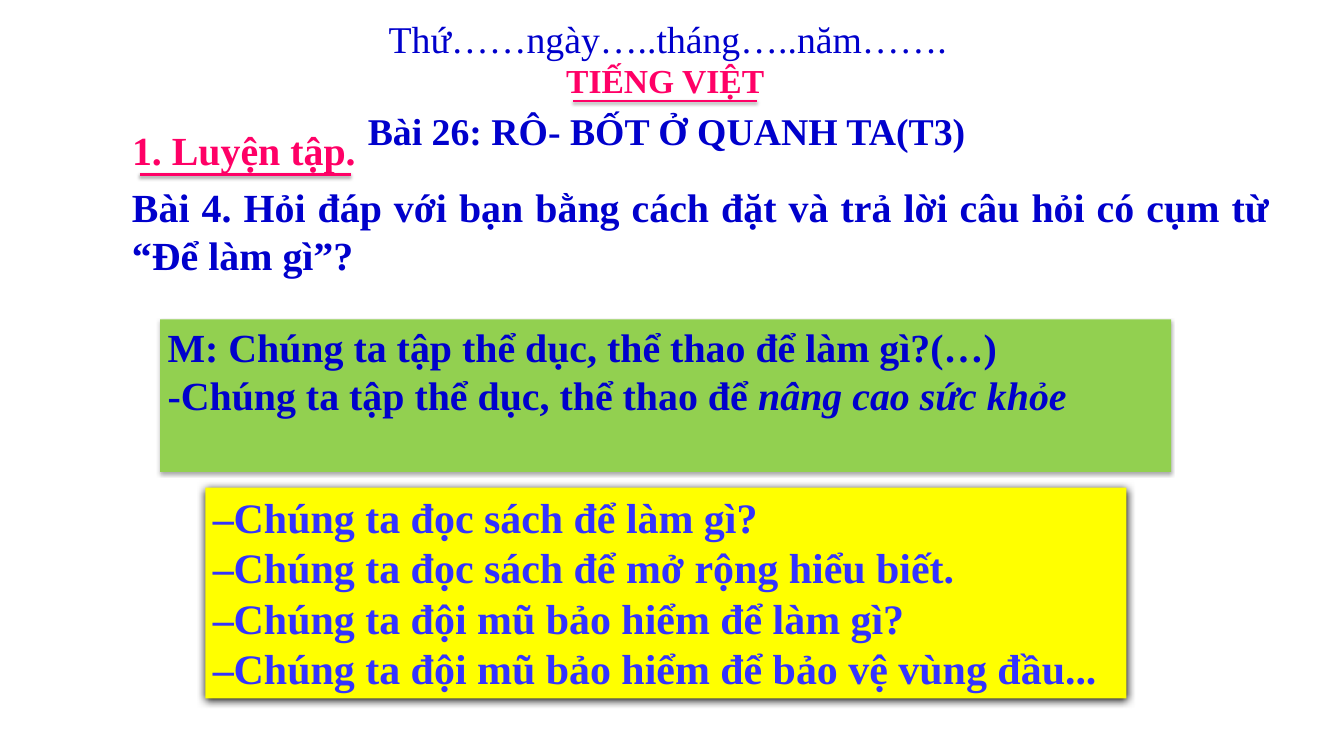
from dataclasses import dataclass
from lxml.etree import SubElement
from pptx import Presentation
from pptx.dml.color import RGBColor
from pptx.enum.shapes import MSO_CONNECTOR, MSO_SHAPE
from pptx.enum.text import MSO_ANCHOR, MSO_AUTO_SIZE, PP_ALIGN
from pptx.oxml.ns import qn
from pptx.util import Inches, Pt


@dataclass(frozen=True)
class Theme:
    """Colours, font and type sizes of the lesson."""
    font: str = "Times New Roman"
    navy: str = "0000CC"
    blue: str = "3333FF"
    pink: str = "FF0066"
    green: str = "92D050"
    yellow: str = "FFFF00"
    black: str = "000000"
    small: int = 32
    title: int = 36
    body: int = 38
    answer: int = 40


class Lesson:
    """Draws the elements of a lesson slide in one style."""

    def __init__(self, theme, slide):
        """Keep the theme and the current slide."""
        self.theme, self.slide = theme, slide

    def shade(self, props, alpha, blur, dist):
        """Give shape properties a shadow that falls straight down."""
        effects = props.find(qn("a:effectLst"))
        if effects is None:
            effects = SubElement(props, qn("a:effectLst"))
        values = {"blurRad": Pt(blur), "dist": Pt(dist), "dir": 90 * 60000}
        outer = SubElement(effects, qn("a:outerShdw"), rotWithShape="0")
        for name, value in values.items():
            outer.set(name, str(int(value)))
        color = SubElement(outer, qn("a:srgbClr"), val=self.theme.black)
        SubElement(color, qn("a:alpha"), val=str(alpha * 1000))

    def letter(self, shape, lines, size, color, align, wrap, bold):
        """Fill a shape with lines, each a list of plain and italic parts in turn."""
        frame = shape.text_frame
        layout = {"word_wrap": wrap, "vertical_anchor": MSO_ANCHOR.TOP,
                  "auto_size": MSO_AUTO_SIZE.SHAPE_TO_FIT_TEXT}
        for name, value in layout.items():
            setattr(frame, name, value)
        for index, parts in enumerate(lines):
            para = frame.add_paragraph() if index else frame.paragraphs[0]
            para.alignment = align
            for turn, part in enumerate(parts):
                run = para.add_run()
                run.text = part
                style = {"name": self.theme.font, "size": Pt(size),
                         "bold": bold, "italic": turn % 2 == 1}
                for name, value in style.items():
                    setattr(run.font, name, value)
                run.font.color.rgb = RGBColor.from_string(color)

    def label(self, box, text, size, color, align=PP_ALIGN.LEFT, wrap=False, bold=True):
        """Add a text box with one paragraph."""
        shape = self.slide.shapes.add_textbox(*map(Inches, box))
        self.letter(shape, [[text]], size, color, align, wrap, bold)

    def panel(self, box, fill, shadow, lines, size, color, align=PP_ALIGN.LEFT):
        """Add a filled, shaded rectangle with text."""
        shape = self.slide.shapes.add_shape(MSO_SHAPE.RECTANGLE, *map(Inches, box))
        shape.fill.solid()
        shape.fill.fore_color.rgb = RGBColor.from_string(fill)
        shape.line.fill.background()
        shape.shadow.inherit = False
        self.shade(shape.element.spPr, *shadow)
        self.letter(shape, lines, size, color, align, True, True)

    def rule(self, left, right, top, width, shadow):
        """Add a shaded horizontal underline."""
        ends = map(Inches, (left, top, right, top))
        line = self.slide.shapes.add_connector(MSO_CONNECTOR.STRAIGHT, *ends)
        line.line.color.rgb = RGBColor.from_string(self.theme.pink)
        line.line.width = Pt(width)
        self.shade(line.element.spPr, *shadow)


def main():
    """Build the slide and save it."""
    deck = Presentation()
    deck.slide_width, deck.slide_height = Inches(17.8), Inches(10)
    look = Theme()
    page = Lesson(look, deck.slides.add_slide(deck.slide_layouts[6]))

    page.label((5.05, 0.16, 7.67, 0.71), "Thứ……ngày…..tháng…..năm…….",
               look.title, look.navy, bold=False)
    page.label((7.4, 0.75, 2.85, 0.64), "TIẾNG VIỆT", look.small, look.pink)
    page.rule(7.59, 10.03, 1.34, 2, (38, 3.1, 1.6))
    page.label((1.65, 1.62, 4.58, 0.74), "1. Luyện tập.", look.body, look.pink, wrap=True)
    page.rule(1.85, 4.65, 2.31, 3, (35, 3.1, 1.8))
    page.label((1.65, 2.37, 15.27, 1.38),
               "Bài 4. Hỏi đáp với bạn bằng cách đặt và trả lời câu hỏi có cụm từ “Để làm gì”?",
               look.body, look.navy, PP_ALIGN.JUSTIFY, wrap=True)
    page.panel((2.12, 4.23, 13.39, 2.02), look.green, (32, 3.5, 2.2),
               [["M: Chúng ta tập thể dục, thể thao để làm gì?(…)"],
                ["-Chúng ta tập thể dục, thể thao để ", "nâng cao sức khỏe"]],
               look.body, look.navy, PP_ALIGN.JUSTIFY)
    answers = ("đọc sách để làm gì?", "đọc sách để mở rộng hiểu biết.",
               "đội mũ bảo hiểm để làm gì?", "đội mũ bảo hiểm để bảo vệ vùng đầu...")
    page.panel((2.72, 6.46, 12.2, 2.79), look.yellow, (100, 8.5, 1),
               [[f"–Chúng ta {answer}"] for answer in answers], look.answer, look.blue)
    page.label((4.73, 1.38, 8.2, 0.71), "Bài 26: RÔ- BỐT Ở QUANH TA(T3)",
               look.title, look.navy, PP_ALIGN.CENTER)
    deck.save("out.pptx")


if __name__ == "__main__":
    main()
